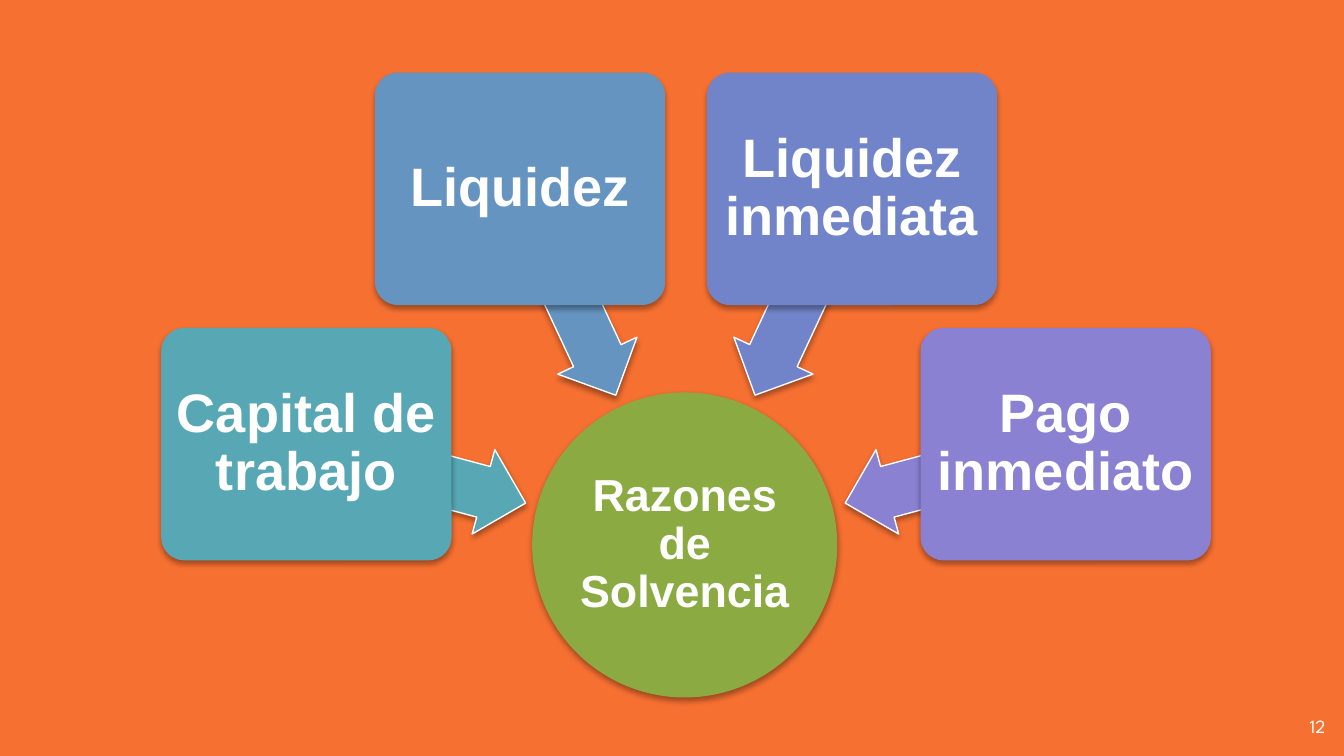
from lxml import etree
from pptx import Presentation
from pptx.dml.color import RGBColor
from pptx.enum.shapes import MSO_SHAPE as Shape
from pptx.enum.text import MSO_ANCHOR as Anchor, PP_ALIGN as Align
from pptx.oxml.ns import qn
from pptx.util import Inches, Pt

COLORS = {
    "background": "F67031",
    "center": "8BAB42",
    "teal": "57A7B5",
    "blue": "6494BF",
    "indigo": "7284C9",
    "violet": "8B81D2",
    "white": "FFFFFF",
    "shadow": "000000",
}


def add_filled_shape(kind, left, top, width, height, color):
    """Add a filled shape without outline and with a soft shadow below it."""
    shape = slide.shapes.add_shape(
        kind, Inches(left), Inches(top), Inches(width), Inches(height))
    shape.fill.solid()
    shape.fill.fore_color.rgb = RGBColor.from_string(COLORS[color])
    shape.line.fill.background()
    shape.shadow.inherit = False
    effects = shape._element.spPr.find(qn("a:effectLst"))
    shadow = etree.SubElement(
        effects, qn("a:outerShdw"), blurRad=str(Pt(3.1)), dist=str(Pt(1.8)),
        dir="5400000", rotWithShape="0")
    shadow_color = etree.SubElement(shadow, qn("a:srgbClr"), val=COLORS["shadow"])
    etree.SubElement(shadow_color, qn("a:alpha"), val="35000")
    return shape


def write_text(shape, text, size, inset, font="Arial", bold=True,
               align=Align.CENTER, line_spacing=0.9):
    frame = shape.text_frame
    frame.word_wrap = True
    frame.vertical_anchor = Anchor.MIDDLE
    for side in ("left", "top", "right", "bottom"):
        setattr(frame, f"margin_{side}", Inches(inset))
    paragraph = frame.paragraphs[0]
    paragraph.alignment = align
    paragraph.line_spacing = line_spacing
    run = paragraph.add_run()
    run.text = text
    for name, value in {"name": font, "size": Pt(size), "bold": bold}.items():
        setattr(run.font, name, value)
    run.font.color.rgb = RGBColor.from_string(COLORS["white"])


presentation = Presentation()
presentation.slide_width = Inches(10)
presentation.slide_height = Inches(10 * 9 / 16)
slide = presentation.slides.add_slide(presentation.slide_layouts[6])
slide.background.fill.solid()
slide.background.fill.fore_color.rgb = RGBColor.from_string(COLORS["background"])

# Slide number
number = slide.shapes.add_textbox(
    Inches(9.36), Inches(5.19), Inches(0.6), Inches(0.43))
write_text(number, "12", 10, 0.1, font="League Spartan", bold=False,
           align=Align.RIGHT, line_spacing=1)

# Central circle
circle = add_filled_shape(Shape.OVAL, 3.96, 2.92, 2.27, 2.27, "center")
write_text(circle, "Razones de Solvencia", 24, 0.02)

# Ratios around the circle, each with an arrow pointing at it:
# text, color, box left and top, arrow left and top, arrow rotation
ratios = [
    ("Capital de trabajo", "teal", 1.2, 2.44, 2.25, 3.2, 195),
    ("Liquidez", "blue", 2.79, 0.54, 3.38, 1.85, 245),
    ("Liquidez inmediata", "indigo", 5.26, 0.54, 5.13, 1.85, 295),
    ("Pago inmediato", "violet", 6.85, 2.44, 6.26, 3.2, 345),
]
for text, color, box_left, box_top, arrow_left, arrow_top, rotation in ratios:
    arrow = add_filled_shape(
        Shape.LEFT_ARROW, arrow_left, arrow_top, 1.69, 0.65, color)
    arrow.rotation = rotation
    arrow.adjustments[0] = 0.6
    arrow.adjustments[1] = 0.5
    arrow.line.color.rgb = RGBColor.from_string(COLORS["white"])
    arrow.line.width = Pt(0.75)

    box = add_filled_shape(
        Shape.ROUNDED_RECTANGLE, box_left, box_top, 2.16, 1.73, color)
    box.adjustments[0] = 0.1
    write_text(box, text, 29, 0.06)

presentation.save("out.pptx")
